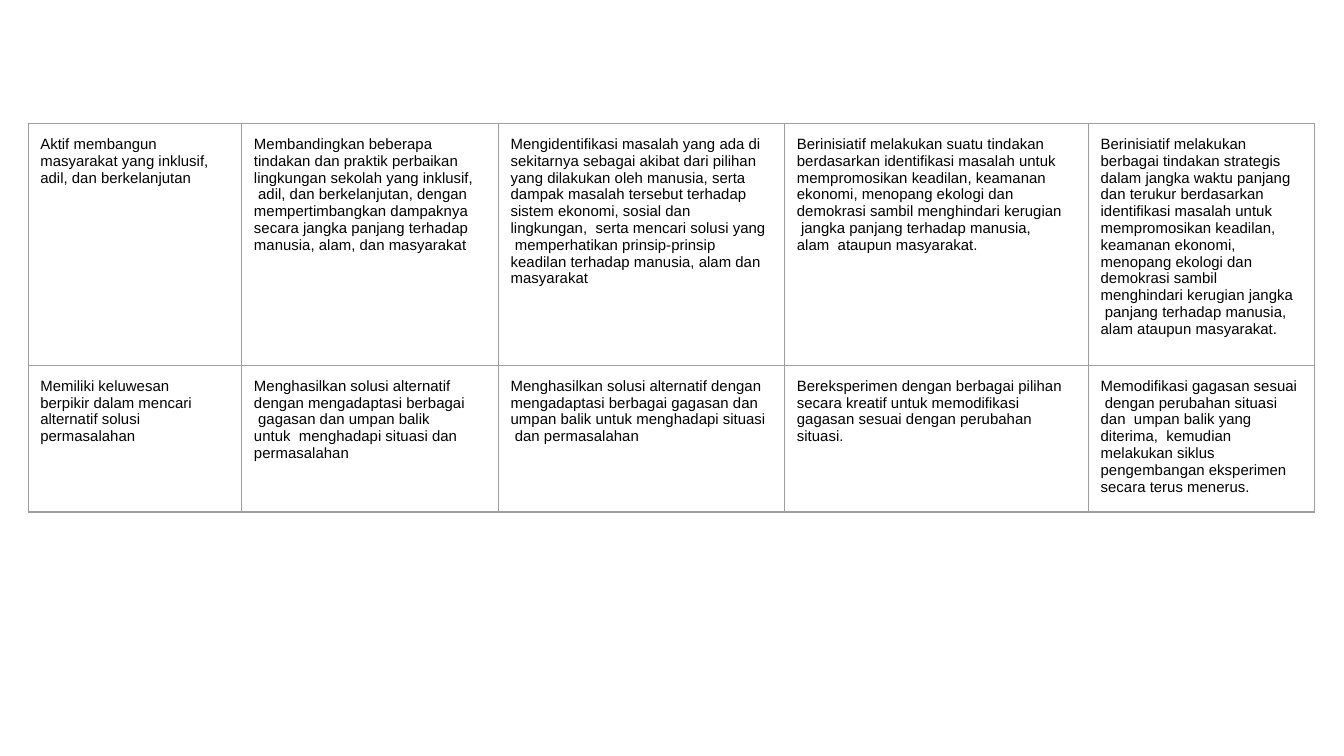
from lxml import etree
from pptx import Presentation, util as u
from pptx.dml.color import RGBColor
from pptx.oxml.ns import qn

HUES = {"text": "000000", "rule": "9E9E9E"}
WIDE = 10
HIGH = WIDE * 9 / 16
LEFT, TOP, PAD = 0.21, 0.92, 0.09
COLS = [1.59, 1.91, 2.13, 2.26, 1.68]
ROWS = [1.8, 1.09]
# Each cell: right indent, words
CELLS = [
    [
        (0.21, "Aktif membangun  masyarakat yang inklusif,  adil, dan "
         "berkelanjutan"),
        (0.17, "Membandingkan beberapa  tindakan dan praktik perbaikan  "
         "lingkungan sekolah yang inklusif,  adil, dan berkelanjutan, dengan  "
         "mempertimbangkan dampaknya  secara jangka panjang terhadap  "
         "manusia, alam, dan masyarakat"),
        (0.11, "Mengidentiﬁkasi masalah yang ada di  sekitarnya sebagai "
         "akibat dari pilihan  yang dilakukan oleh manusia, serta  dampak "
         "masalah tersebut terhadap  sistem ekonomi, sosial dan lingkungan,  "
         "serta mencari solusi yang  memperhatikan prinsip-prinsip  keadilan "
         "terhadap manusia, alam dan  masyarakat"),
        (0.18, "Berinisiatif melakukan suatu tindakan  berdasarkan "
         "identiﬁkasi masalah untuk  mempromosikan keadilan, keamanan  "
         "ekonomi, menopang ekologi dan  demokrasi sambil menghindari "
         "kerugian  jangka panjang terhadap manusia, alam  ataupun "
         "masyarakat."),
        (0.14, "Berinisiatif melakukan  berbagai tindakan strategis  dalam "
         "jangka waktu panjang  dan terukur berdasarkan  identiﬁkasi masalah "
         "untuk  mempromosikan keadilan,  keamanan ekonomi,  menopang "
         "ekologi dan  demokrasi sambil  menghindari kerugian jangka  "
         "panjang terhadap manusia,  alam ataupun masyarakat."),
    ],
    [
        (0.21, "Memiliki keluwesan  berpikir dalam mencari  alternatif "
         "solusi  permasalahan"),
        (0.23, "Menghasilkan solusi alternatif  dengan mengadaptasi berbagai  "
         "gagasan dan umpan balik untuk  menghadapi situasi dan  "
         "permasalahan"),
        (0.13, "Menghasilkan solusi alternatif dengan  mengadaptasi berbagai "
         "gagasan dan  umpan balik untuk menghadapi situasi  dan "
         "permasalahan"),
        (0.13, "Bereksperimen dengan berbagai pilihan  secara kreatif untuk "
         "memodiﬁkasi  gagasan sesuai dengan perubahan situasi."),
        (0.12, "Memodiﬁkasi gagasan sesuai  dengan perubahan situasi dan  "
         "umpan balik yang diterima,  kemudian melakukan siklus  "
         "pengembangan eksperimen  secara terus menerus."),
    ],
]


def frame(cell):
    """Rule all four sides of a cell; borders must precede its fill."""
    props = cell._tc.get_or_add_tcPr()
    for spot, side in enumerate(("lnL", "lnR", "lnT", "lnB")):
        line = etree.Element(qn(f"a:{side}"), w=str(u.Pt(0.75)))
        fill = etree.SubElement(line, qn("a:solidFill"))
        etree.SubElement(fill, qn("a:srgbClr"), val=HUES["rule"])
        props.insert(spot, line)


def write(cell, inset, words):
    cell.fill.background()
    frame(cell)
    cell.margin_left = cell.margin_right = cell.margin_bottom = 0
    cell.margin_top = u.Inches(PAD)
    cell.text = words
    para = cell.text_frame.paragraphs[0]
    props = para._p.get_or_add_pPr()
    props.set("marL", str(u.Inches(PAD)))
    props.set("marR", str(u.Inches(inset)))
    props.set("indent", "0")
    font = para.font
    font.name, font.size = "Arial", u.Pt(8)
    font.color.rgb = RGBColor.from_string(HUES["text"])


def main():
    deck = Presentation()
    deck.slide_width, deck.slide_height = u.Inches(WIDE), u.Inches(HIGH)
    slide = deck.slides.add_slide(deck.slide_layouts[6])
    size = [u.Inches(n) for n in (LEFT, TOP, sum(COLS), sum(ROWS))]
    grid = slide.shapes.add_table(len(ROWS), len(COLS), *size).table
    grid.first_row = grid.horz_banding = False
    for col, width in zip(grid.columns, COLS):
        col.width = u.Inches(width)
    for row, height, texts in zip(grid.rows, ROWS, CELLS):
        row.height = u.Inches(height)
        for cell, (inset, words) in zip(row.cells, texts):
            write(cell, inset, words)
    deck.save("out.pptx")


if __name__ == "__main__":
    main()
